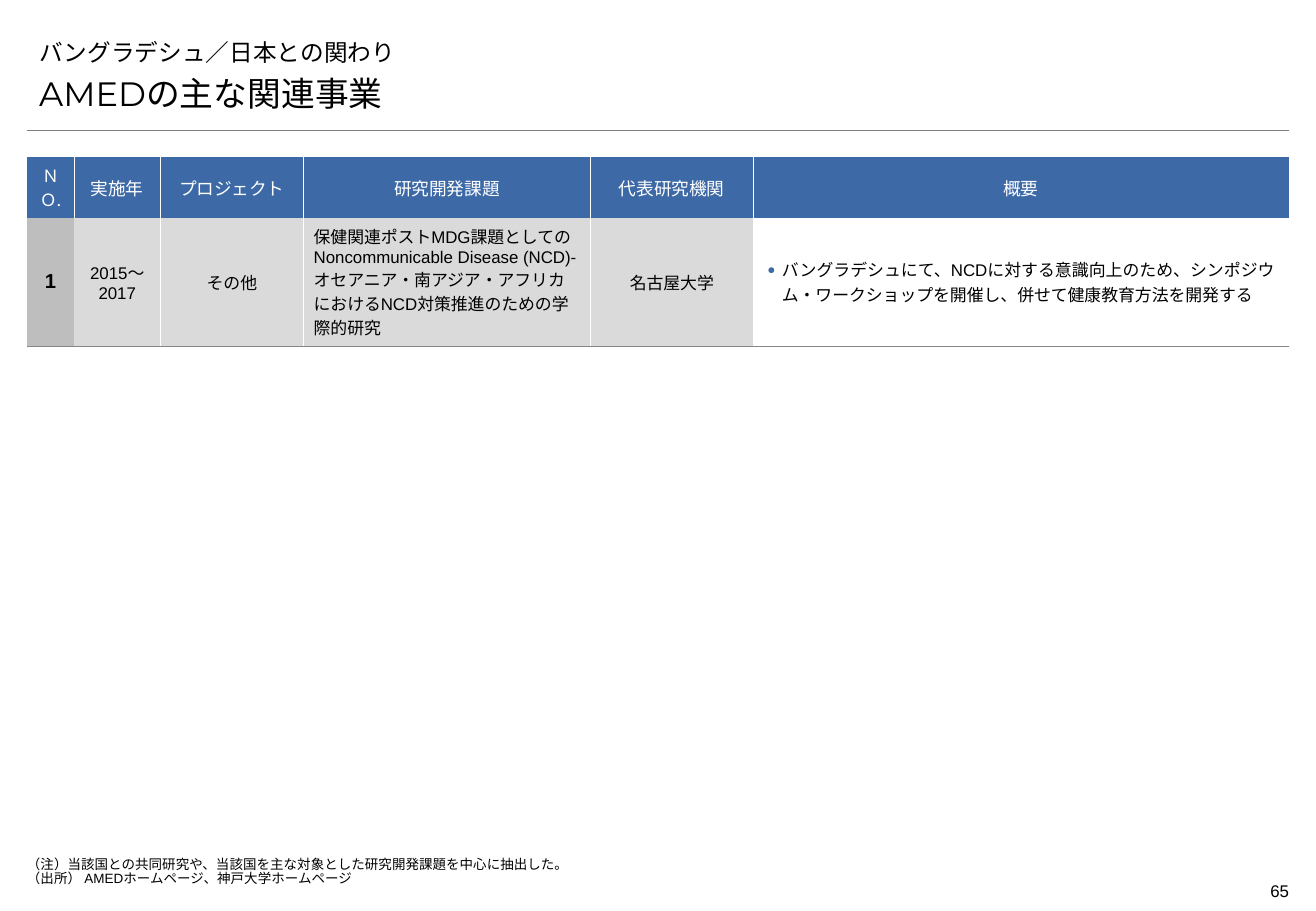
from dataclasses import dataclass

from lxml import etree
from pptx import Presentation
from pptx.dml.color import RGBColor
from pptx.enum.lang import MSO_LANGUAGE_ID
from pptx.enum.shapes import MSO_CONNECTOR
from pptx.enum.text import MSO_ANCHOR, MSO_AUTO_SIZE, PP_ALIGN
from pptx.oxml.ns import qn
from pptx.util import Pt

LEFT, CENTER, RIGHT, JUSTIFY = PP_ALIGN.LEFT, PP_ALIGN.CENTER, PP_ALIGN.RIGHT, PP_ALIGN.JUSTIFY
MIDDLE, BOTTOM, TOP = MSO_ANCHOR.MIDDLE, MSO_ANCHOR.BOTTOM, MSO_ANCHOR.TOP
STRAIGHT, NO_FIT = MSO_CONNECTOR.STRAIGHT, MSO_AUTO_SIZE.NONE
JAPANESE = MSO_LANGUAGE_ID.JAPANESE

BLACK = RGBColor(0x00, 0x00, 0x00)
WHITE = RGBColor(0xFF, 0xFF, 0xFF)
BLUE = RGBColor(0x3D, 0x6A, 0xA7)
NUMBER_GRAY = RGBColor(0xBE, 0xBE, 0xBE)
CELL_GRAY = RGBColor(0xDA, 0xDA, 0xDA)
ROW_LINE = RGBColor(0x86, 0x86, 0x86)
RULE_GRAY = RGBColor(0x7F, 0x7F, 0x7F)

ARIAL, MONTSERRAT, NOTO = "Arial", "Montserrat", "Noto Sans CJK JP"
PLAIN_TABLE_STYLE = "{2D5ABB26-0587-4C30-8999-92F81FD0307C}"
MARGIN, CONTENT_WIDTH = 16, 748
HEADER_HEIGHT, ROW_HEIGHT = 36, 76


@dataclass
class Column:
    heading: str
    value: str
    width: float
    fill: RGBColor = CELL_GRAY
    heading_size: float = 10.5
    size: float = 10
    bold: bool = False
    align: PP_ALIGN = CENTER
    inset_x: float = 6
    inset_y: float = 2
    bulleted: bool = False


COLUMNS = [
    Column("ＮＯ.", "1", 28, fill=NUMBER_GRAY, heading_size=10, size=12, bold=True, inset_x=3),
    Column("実施年", "2015～2017", 51, inset_x=3),
    Column("プロジェクト", "その他", 85),
    Column("研究開発課題", "保健関連ポストMDG課題としてのNoncommunicable Disease (NCD)-"
           "オセアニア・南アジア・アフリカにおけるNCD対策推進のための学際的研究", 170, align=LEFT),
    Column("代表研究機関", "名古屋大学", 96.5),
    Column("概要", "バングラデシュにて、NCDに対する意識向上のため、シンポジウム・ワークショップを開催し、"
           "併せて健康教育方法を開発する", 317.5, fill=WHITE, align=JUSTIFY,
           inset_x=8.5, inset_y=6, bulleted=True),
]


def add_bullet(p) -> None:
    pPr = p._p.get_or_add_pPr()
    pPr.set("marL", str(Pt(8.5)))
    pPr.set("indent", str(-Pt(8.5)))
    color = etree.SubElement(pPr, qn("a:buClr"))
    etree.SubElement(color, qn("a:srgbClr"), val=str(BLUE))
    etree.SubElement(pPr, qn("a:buSzPct"), val="80000")
    etree.SubElement(pPr, qn("a:buFont"), typeface=ARIAL)
    etree.SubElement(pPr, qn("a:buChar"), char="●")


def write(tf, text: str, *, size: float, font: str = ARIAL, color: RGBColor = BLACK,
          bold: bool = False, align: PP_ALIGN = LEFT, spacing: float = 1.0,
          bulleted: bool = False) -> None:
    """Fill a text frame, one paragraph for each line of text."""
    for i, line in enumerate(text.split("\n")):
        p = tf.add_paragraph() if i else tf.paragraphs[0]
        p.alignment = align
        p.line_spacing = spacing
        p.space_before = p.space_after = Pt(0)
        if bulleted:
            add_bullet(p)
        r = p.add_run()
        r.text = line
        r.font.name, r.font.size, r.font.bold = font, Pt(size), bold
        r.font.color.rgb = color
        r.font.language_id = JAPANESE
        latin = r._r.rPr.find(qn("a:latin"))
        latin.addnext(etree.Element(qn("a:ea"), typeface=NOTO))


def place(sp, left: float, top: float, width: float, height: float) -> None:
    sp.left, sp.top, sp.width, sp.height = Pt(left), Pt(top), Pt(width), Pt(height)


def set_heading(sp, text: str, top: float, size: float) -> None:
    place(sp, MARGIN, top, CONTENT_WIDTH, 28)
    tf = sp.text_frame
    tf.auto_size = NO_FIT
    tf.vertical_anchor = BOTTOM
    write(tf, text, size=size, font=MONTSERRAT)


def add_text(slide, text: str, left: float, top: float, width: float, height: float, *,
             anchor: MSO_ANCHOR, inset_y: float = 0, **text_format) -> None:
    sp = slide.shapes.add_textbox(Pt(left), Pt(top), Pt(width), Pt(height))
    tf = sp.text_frame
    tf.word_wrap = True
    tf.vertical_anchor = anchor
    tf.margin_left = tf.margin_right = 0
    tf.margin_top = tf.margin_bottom = Pt(inset_y)
    write(tf, text, **text_format)


def add_rule(slide, top: float) -> None:
    line = slide.shapes.add_connector(STRAIGHT, Pt(MARGIN), Pt(top),
                                      Pt(MARGIN + CONTENT_WIDTH), Pt(top))
    line.line.color.rgb = RULE_GRAY
    line.line.width = Pt(0.25)
    etree.SubElement(line._element.spPr, qn("a:effectLst"))


def set_borders(cell, borders: dict[str, RGBColor]) -> None:
    """Draw half-point borders; keys are lnL, lnR, lnB in that order."""
    for i, (side, color) in enumerate(borders.items()):
        ln = etree.Element(qn(f"a:{side}"), w=str(Pt(0.5)))
        fill = etree.SubElement(ln, qn("a:solidFill"))
        etree.SubElement(fill, qn("a:srgbClr"), val=str(color))
        cell._tc.get_or_add_tcPr().insert(i, ln)


def format_cell(cell, fill: RGBColor, inset_x: float, inset_y: float) -> None:
    cell.fill.solid()
    cell.fill.fore_color.rgb = fill
    cell.vertical_anchor = MIDDLE
    cell.margin_left = cell.margin_right = Pt(inset_x)
    cell.margin_top = cell.margin_bottom = Pt(inset_y)


def add_project_table(slide) -> None:
    frame = slide.shapes.add_table(2, len(COLUMNS), Pt(MARGIN), Pt(93),
                                   Pt(CONTENT_WIDTH), Pt(HEADER_HEIGHT + ROW_HEIGHT))
    table = frame.table
    table.horz_banding = False
    table._tbl.tblPr.find(qn("a:tableStyleId")).text = PLAIN_TABLE_STYLE
    table.rows[0].height, table.rows[1].height = Pt(HEADER_HEIGHT), Pt(ROW_HEIGHT)
    last = len(COLUMNS) - 1
    for i, column in enumerate(COLUMNS):
        table.columns[i].width = Pt(column.width)
        head, body = table.cell(0, i), table.cell(1, i)
        format_cell(head, BLUE, 3, 3.6)
        write(head.text_frame, column.heading, size=column.heading_size, font=NOTO,
              color=WHITE, align=CENTER)
        format_cell(body, column.fill, column.inset_x, column.inset_y)
        write(body.text_frame, column.value, size=column.size, bold=column.bold,
              align=column.align, bulleted=column.bulleted)
        left = {"lnL": WHITE} if i > 0 else {}
        right = {"lnR": WHITE} if i < last else {}
        set_borders(head, left | right)
        body_left = left if i > 1 else {}
        body_right = right if i > 0 else {}
        set_borders(body, body_left | body_right | {"lnB": ROW_LINE})


def main() -> None:
    prs = Presentation()
    prs.slide_width, prs.slide_height = Pt(780), Pt(540)
    slide = prs.slides.add_slide(prs.slide_layouts.get_by_name("Section Header"))
    add_rule(slide, 77)
    set_heading(slide.shapes.title, "バングラデシュ／日本との関わり", 15, 14)
    set_heading(slide.placeholders[1], "AMEDの主な関連事業", 43, 20)
    add_project_table(slide)
    add_text(slide, "（注）当該国との共同研究や、当該国を主な対象とした研究開発課題を中心に抽出した。\n"
             "（出所） AMEDホームページ、神戸大学ホームページ",
             MARGIN, 502.5, 680, 22.5, anchor=BOTTOM, size=8, spacing=0.82)
    add_text(slide, "65", 708, 518.5, 56, 19, anchor=TOP, inset_y=3.6, size=10, align=RIGHT)
    prs.save("out.pptx")


if __name__ == "__main__":
    main()
